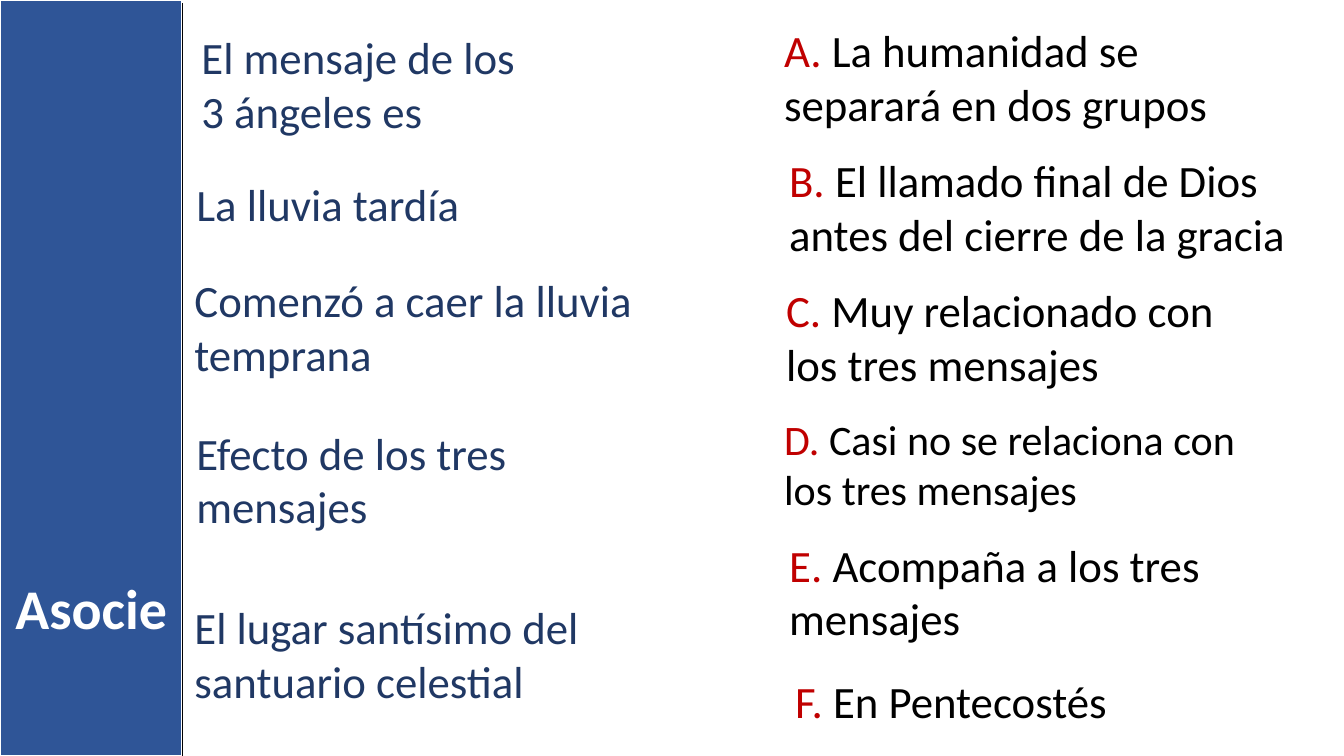
from lxml import etree
from pptx import Presentation
from pptx import util as u
from pptx.dml.color import RGBColor
from pptx.enum import shapes, text
from pptx.oxml import ns

# Content: left, top, width, height in points
TITLE = ("Asocie", (0, 406, 130.3, 55.4))
PROMPTS = [
    ("El mensaje de los 3 ángeles es", (136.8, 18, 260, 85)),
    ("La lluvia tardía", (133.2, 122.4, 371.5, 46)),
    ("Comenzó a caer la lluvia temprana", (131.8, 191.5, 367.2, 85)),
    ("Efecto de los tres mensajes", (133.2, 300.2, 355.7, 85)),
    ("El lugar santísimo del santuario celestial", (131.8, 424.8, 371.5, 85)),
]
ANSWERS = [
    ("La humanidad se separará en dos grupos", (553, 13, 360, 85), 32),
    ("El llamado final de Dios antes del cierre de la gracia",
     (556.6, 105.8, 372.2, 85), 32),
    ("Muy relacionado con los tres mensajes", (554.4, 198.7, 340.6, 85), 32),
    ("Casi no se relaciona con los tres mensajes", (553, 291.6, 342, 80), 30),
    ("Acompaña a los tres mensajes", (556.6, 380.2, 353.5, 85), 32),
    ("En Pentecostés", (560.9, 477.4, 332.6, 46), 32),
]
COLORS = {"band": "2F5597", "prompt": "203864", "letter": "C00000",
          "ink": "000000", "white": "FFFFFF"}
FONT = "Calibri"
WIDTH, HEIGHT, BAND = 960, 540, 130.3


def color(name):
    return RGBColor.from_string(COLORS[name])


def add_text(page, place, spans, size, bold=False, align=text.PP_ALIGN.LEFT):
    box = page.shapes.add_textbox(*map(u.Pt, place))
    frame = box.text_frame
    frame.word_wrap = True
    frame.auto_size = text.MSO_AUTO_SIZE.SHAPE_TO_FIT_TEXT
    para = frame.paragraphs[0]
    para.alignment = align
    for words, tint in spans:
        span = para.add_run()
        span.text = words
        span.font.name = FONT
        span.font.size = u.Pt(size)
        span.font.bold = bold
        span.font.color.rgb = color(tint)


def main():
    deck = Presentation()
    deck.slide_width, deck.slide_height = u.Pt(WIDTH), u.Pt(HEIGHT)
    page = deck.slides.add_slide(deck.slide_layouts[6])

    # Side band
    band = page.shapes.add_shape(shapes.MSO_SHAPE.RECTANGLE, 0, 0,
                                 u.Pt(BAND), u.Pt(HEIGHT))
    band.shadow.inherit = False
    band.fill.solid()
    band.fill.fore_color.rgb = color("band")
    band.line.color.rgb = color("white")
    band.line.width = u.Pt(1.5)

    # Prompts on the left
    for words, place in PROMPTS:
        add_text(page, place, [(words, "prompt")], 32)

    # Lettered answers on the right
    for letter, (words, place, size) in zip("ABCDEF", ANSWERS):
        add_text(page, place, [(f"{letter}. ", "letter"), (words, "ink")], size)

    # Title on the band
    words, place = TITLE
    add_text(page, place, [(words, "white")], 40, True, text.PP_ALIGN.CENTER)

    # Edge of the band
    edge = page.shapes.add_connector(shapes.MSO_CONNECTOR.STRAIGHT, u.Pt(BAND),
                                     u.Pt(2.2), u.Pt(BAND), u.Pt(HEIGHT))
    edge.line.color.rgb = color("ink")
    edge.line.width = u.Pt(1)
    etree.SubElement(edge._element.spPr, ns.qn("a:effectLst"))

    deck.save("out.pptx")


if __name__ == "__main__":
    main()
